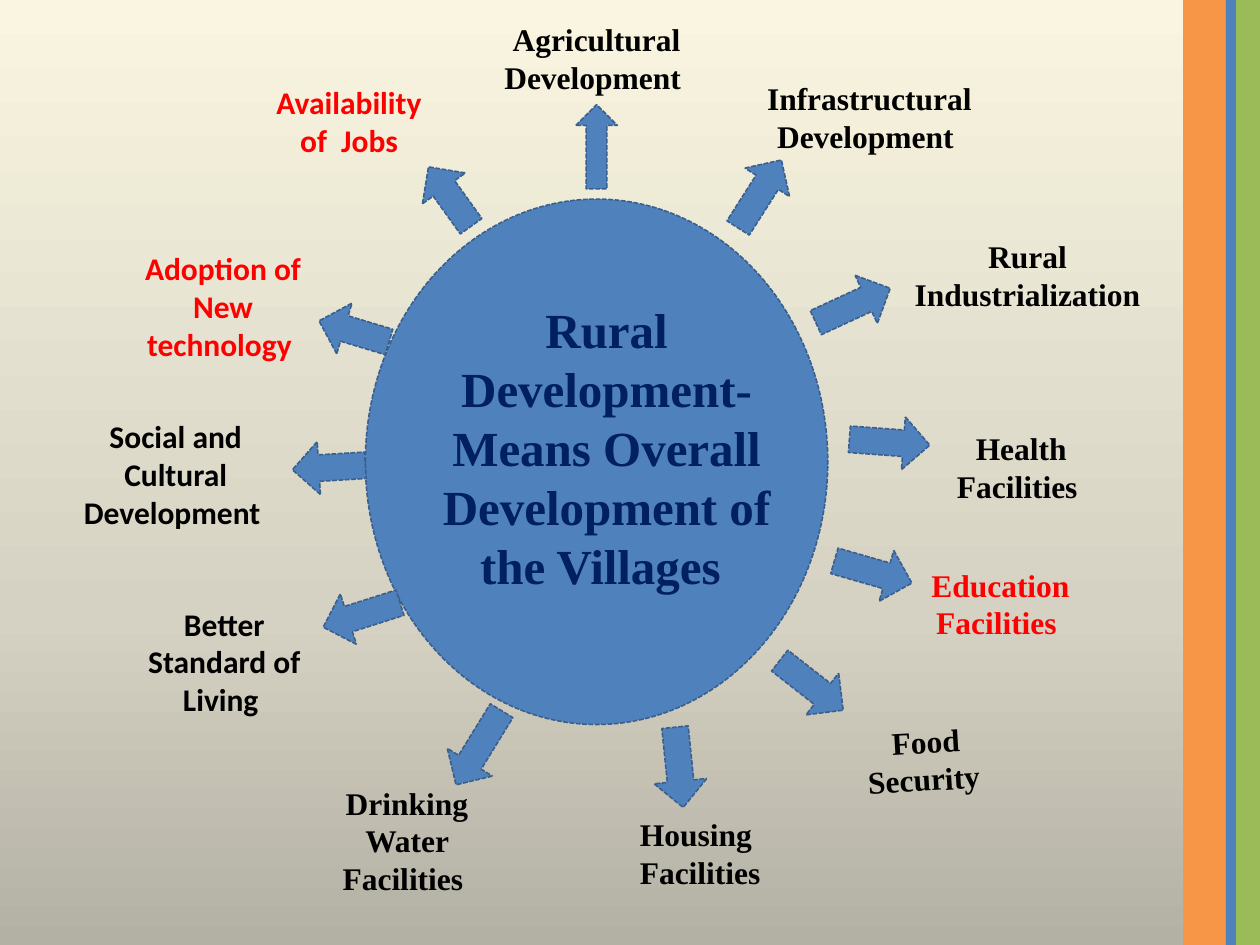
from copy import deepcopy
from dataclasses import dataclass

from pptx import Presentation
from pptx.dml.color import RGBColor
from pptx.enum.dml import MSO_LINE
from pptx.enum.shapes import MSO_SHAPE
from pptx.enum.text import MSO_AUTO_SIZE, PP_ALIGN
from pptx.util import Inches, Pt

BLUE = RGBColor(0x4F, 0x81, 0xBD)
OUTLINE = RGBColor(0x3A, 0x5F, 0x8C)
ORANGE = RGBColor(0xF7, 0x96, 0x46)
GREEN = RGBColor(0x9B, 0xBB, 0x59)
NAVY = RGBColor(0x00, 0x20, 0x60)
BLACK = RGBColor(0x00, 0x00, 0x00)
RED = RGBColor(0xFF, 0x00, 0x00)
BACKGROUND = [
    (0, RGBColor(0xB3, 0xB0, 0xA4)),
    (0.35, RGBColor(0xD5, 0xD2, 0xC3)),
    (1, RGBColor(0xF9, 0xF5, 0xE0)),
]
SERIF, SANS = "Times New Roman", "Calibri"
LABEL_HEIGHT = {2: 9.47, 3: 13.47}  # by number of lines


@dataclass
class Box:
    left: float
    top: float
    width: float
    height: float

    def inner(self, x, y, w, h):
        """Return the inner box given in percent of this one."""
        return Box(self.left + self.width * x / 100, self.top + self.height * y / 100,
                   self.width * w / 100, self.height * h / 100)

    def emu(self):
        return [round(v) for v in (self.left, self.top, self.width, self.height)]


@dataclass
class Spoke:
    """A label and its arrow; places and sizes are percent of the diagram."""
    text: str
    label: tuple  # left, top, width
    lines: int
    arrow: tuple  # centre x, centre y, length
    angle: float
    font: str = SERIF
    color: RGBColor = BLACK
    arrow_width: float = 4.2
    align: PP_ALIGN = PP_ALIGN.CENTER
    tilt: float = 0


SPOKES = [
    Spoke("Agricultural Development ", (39, 1.47, 16.7), 2, (47.35, 15.53, 8.93), 0,
          arrow_width=3.3),
    Spoke("Infrastructural Development ", (59, 7.73, 20), 2, (60.3, 20.53, 8.53), 32.5),
    Spoke("Rural Industrialization", (70.7, 24.4, 21.7), 2, (67.7, 32.33, 8.67), 65.2),
    Spoke("Health Facilities ", (74.8, 44.8, 12.5), 2, (70.6, 46.8, 8.53), 94.2),
    Spoke("Education Facilities ", (72.3, 59.2, 14.2), 2, (69.3, 60.53, 8.53), 106, color=RED),
    Spoke("Food Security ", (67.5, 75.73, 12.1), 2, (64.4, 72.53, 8.53), 128, tilt=-3.3),
    Spoke("Housing Facilities", (49.8, 85.6, 11.7), 2, (53.9, 81.2, 8.53), 174.2,
          align=PP_ALIGN.LEFT),
    Spoke("Drinking Water Facilities ", (24.8, 82.27, 15), 3, (38, 79.13, 9.2), 211.6),
    Spoke("Better Standard of Living ", (10.7, 63.33, 14.2), 3, (28.7, 65.07, 8.53), 252.3, SANS),
    Spoke("Social and Cultural Development ", (4.8, 43.47, 18.3), 3, (26.1, 49.47, 7.73), 266.5,
          SANS),
    Spoke("Adoption of New technology ", (9.8, 25.73, 15.8), 3, (28.1, 35.07, 7.73), 286.8,
          SANS, RED),
    Spoke("Availability of  Jobs", (19.8, 8.13, 15.8), 2, (35.7, 20.8, 7.73), 324.3, SANS, RED),
]


def add_solid(s, kind, box, color, dashed=False):
    sp = s.shapes.add_shape(kind, *box.emu())
    sp.shadow.inherit = False
    sp.fill.solid()
    sp.fill.fore_color.rgb = color
    if dashed:
        sp.line.color.rgb = OUTLINE
        sp.line.width = Pt(0.9)
        sp.line.dash_style = MSO_LINE.SQUARE_DOT
    else:
        sp.line.fill.background()
    return sp


def add_text(s, box, text, size, font, color, align=PP_ALIGN.CENTER):
    sp = s.shapes.add_textbox(*box.emu())
    tf = sp.text_frame
    tf.word_wrap = True
    tf.auto_size = MSO_AUTO_SIZE.SHAPE_TO_FIT_TEXT
    tf.text = text
    p = tf.paragraphs[0]
    p.alignment = align
    r = p.runs[0]
    r.font.size, r.font.name, r.font.bold = Pt(size), font, True
    r.font.color.rgb = color
    return sp


def paint_background(s):
    fill = s.background.fill
    fill.gradient()
    fill.gradient_angle = 90
    stops = s.element.xpath(".//a:gsLst")[0]
    stops.insert(1, deepcopy(stops[0]))
    for stop, (position, color) in zip(fill.gradient_stops, BACKGROUND):
        stop.position = position
        stop.color.rgb = color


def add_stripes(s, box):
    for x, width, color in [(93.9, 3.5, ORANGE), (98.1, 1.9, GREEN), (97.3, 0.8, BLUE)]:
        add_solid(s, MSO_SHAPE.RECTANGLE, box.inner(x, 0, width, 100), color)


def add_hub(s, box):
    add_solid(s, MSO_SHAPE.OVAL, box, BLUE, dashed=True)
    add_text(s, box.inner(13.6, 18, 77.1, 59),
             "Rural Development- Means Overall Development of the Villages ", 28, SERIF, NAVY)


def add_spoke(s, box, spoke):
    x, y, length = spoke.arrow
    arrow_box = box.inner(x - spoke.arrow_width / 2, y - length / 2, spoke.arrow_width, length)
    add_solid(s, MSO_SHAPE.UP_ARROW, arrow_box, BLUE, dashed=True).rotation = spoke.angle
    label_box = box.inner(*spoke.label, LABEL_HEIGHT[spoke.lines])
    label = add_text(s, label_box, spoke.text, 18, spoke.font, spoke.color, spoke.align)
    label.rotation = spoke.tilt


def main():
    prs = Presentation()
    prs.slide_width, prs.slide_height = Inches(10), Inches(7.5)
    s = prs.slides.add_slide(prs.slide_layouts[6])
    slide_box = Box(0, 0, prs.slide_width, prs.slide_height)
    paint_background(s)
    add_stripes(s, slide_box)
    add_hub(s, slide_box.inner(29, 21.07, 36.7, 55.6))
    for spoke in SPOKES:
        add_spoke(s, slide_box, spoke)
    prs.save("out.pptx")


if __name__ == "__main__":
    main()
